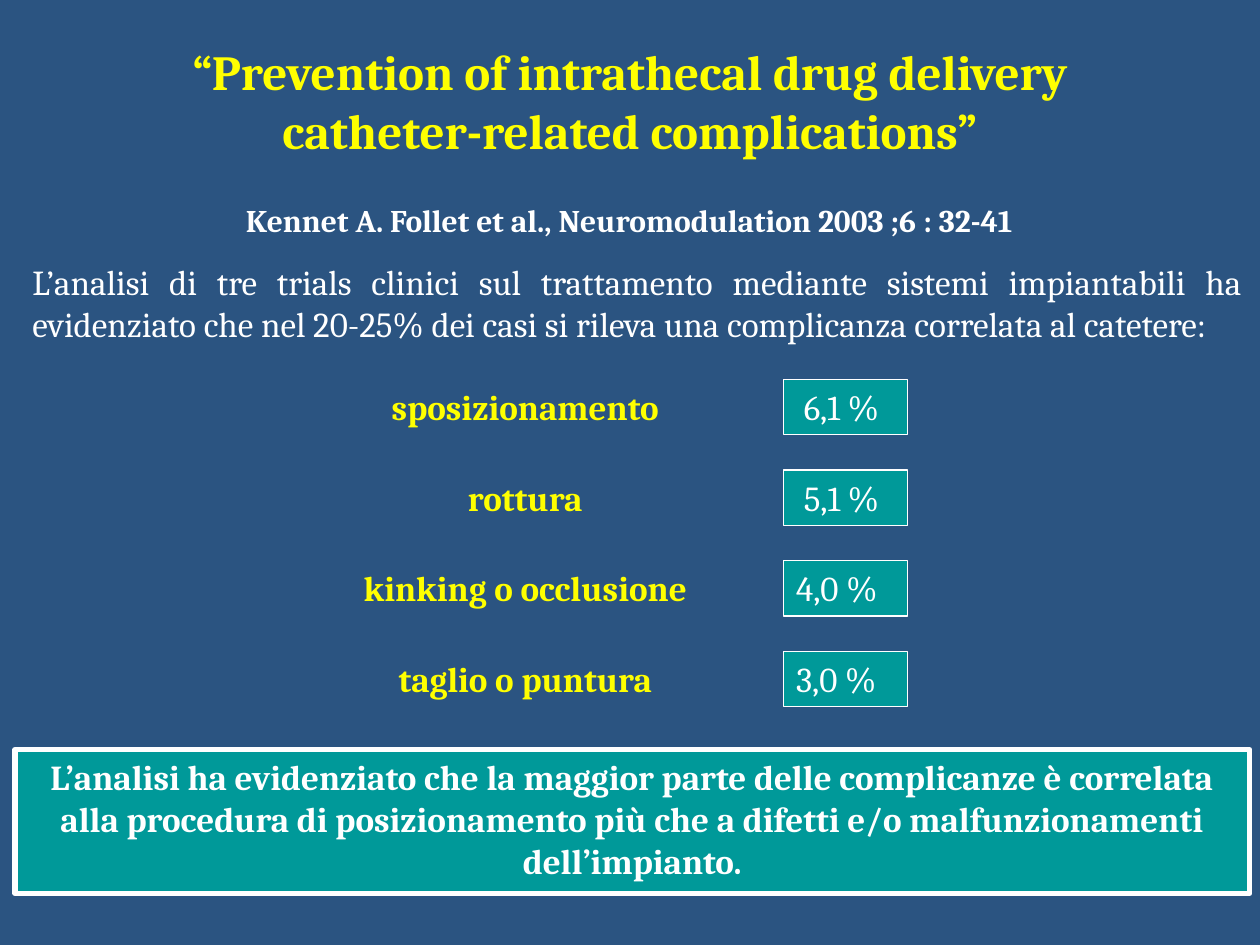
"""Build the slide on catheter-related complications of intrathecal drug delivery."""
from dataclasses import dataclass
from typing import Optional

from pptx import Presentation
from pptx.dml.color import RGBColor as Rgb
from pptx.enum.shapes import MSO_SHAPE as Shape
from pptx.enum.text import MSO_ANCHOR as Anchor, PP_ALIGN as Align
from pptx.util import Pt


@dataclass(frozen=True)
class Theme:
    font: str = "Cambria"
    background: Rgb = Rgb(0x2B, 0x54, 0x81)
    panel: Rgb = Rgb(0x00, 0x99, 0x99)
    accent: Rgb = Rgb(0xFF, 0xFF, 0x00)
    light: Rgb = Rgb(0xFF, 0xFF, 0xFF)
    title_size: float = 28
    citation_size: float = 18
    body_size: float = 20


THEME = Theme()


@dataclass(frozen=True)
class TextBlock:
    left: float
    top: float
    width: float
    height: float
    lines: tuple[str, ...]
    size: float = THEME.body_size
    color: Rgb = THEME.light
    bold: bool = True
    align: Align = Align.CENTER
    border: Optional[float] = None
    inset: float = 7.2


@dataclass(frozen=True)
class Complication:
    label: str
    width: float
    rate: str
    inset: float


HEADINGS = (
    TextBlock(7.2, 20.2, 705.6, 74.2,
              ("“Prevention of intrathecal drug delivery", "catheter-related complications”"),
              size=THEME.title_size, color=THEME.accent),
    TextBlock(70.6, 111.6, 578.2, 28.8,
              ("Kennet A. Follet et al., Neuromodulation 2003 ;6 : 32-41",),
              size=THEME.citation_size),
    TextBlock(11.5, 145.4, 705.6, 79.2,
              ("L’analisi di tre trials clinici sul trattamento mediante sistemi impiantabili ha "
               "evidenziato che nel 20-25% dei casi si rileva una complicanza correlata al catetere:",),
              bold=False, align=Align.JUSTIFY),
)
COMPLICATIONS = (
    Complication("sposizionamento", 191.5, "6,1 %", 11.5),
    Complication("rottura", 172.8, "5,1 %", 11.5),
    Complication("kinking o occlusione", 289.4, "4,0 %", 7.2),
    Complication("taglio o puntura", 209.5, "3,0 %", 7.2),
)
CONCLUSION = TextBlock(
    8.6, 428.4, 705.6, 82.1,
    ("L’analisi ha evidenziato che la maggior parte delle complicanze è correlata alla procedura "
     "di posizionamento più che a difetti e/o malfunzionamenti dell’impianto.",),
    border=3)
FIRST_ROW_TOP, ROW_STEP = 216.7, 51.84
LABEL_CENTER, RATE_LEFT = 300.2, 447.8


def draw_block(page, block: TextBlock) -> None:
    """Draw a text block, as a filled rectangle when it has a border."""
    place = (Pt(block.left), Pt(block.top), Pt(block.width), Pt(block.height))
    if block.border is None:
        box = page.shapes.add_textbox(*place)
    else:
        box = page.shapes.add_shape(Shape.RECTANGLE, *place)
        box.shadow.inherit = False
        box.fill.solid()
        box.fill.fore_color.rgb = THEME.panel
        box.line.color.rgb = THEME.light
        box.line.width = Pt(block.border)
    frame = box.text_frame
    frame.word_wrap = True
    frame.vertical_anchor = Anchor.TOP
    frame.margin_left = Pt(block.inset)
    for index, line in enumerate(block.lines):
        para = frame.add_paragraph() if index else frame.paragraphs[0]
        para.text = line
        para.alignment = block.align
        para.font.name = THEME.font
        para.font.size = Pt(block.size)
        para.font.bold = block.bold
        para.font.color.rgb = block.color


def draw_complication(page, row: int, item: Complication) -> None:
    """Draw one complication label with its rate beside it."""
    top = FIRST_ROW_TOP + row * ROW_STEP
    draw_block(page, TextBlock(LABEL_CENTER - item.width / 2, top, item.width, 31,
                               (item.label,), color=THEME.accent))
    draw_block(page, TextBlock(RATE_LEFT, top, 70.6, 31.7, (item.rate,), bold=False,
                               align=Align.JUSTIFY, border=0.75, inset=item.inset))


def main() -> None:
    """Assemble and save the deck."""
    deck = Presentation()
    deck.slide_width, deck.slide_height = Pt(720), Pt(540)
    page = deck.slides.add_slide(deck.slide_layouts[6])
    page.background.fill.solid()
    page.background.fill.fore_color.rgb = THEME.background
    for block in HEADINGS:
        draw_block(page, block)
    for row, item in enumerate(COMPLICATIONS):
        draw_complication(page, row, item)
    draw_block(page, CONCLUSION)
    deck.save("out.pptx")


if __name__ == "__main__":
    main()
